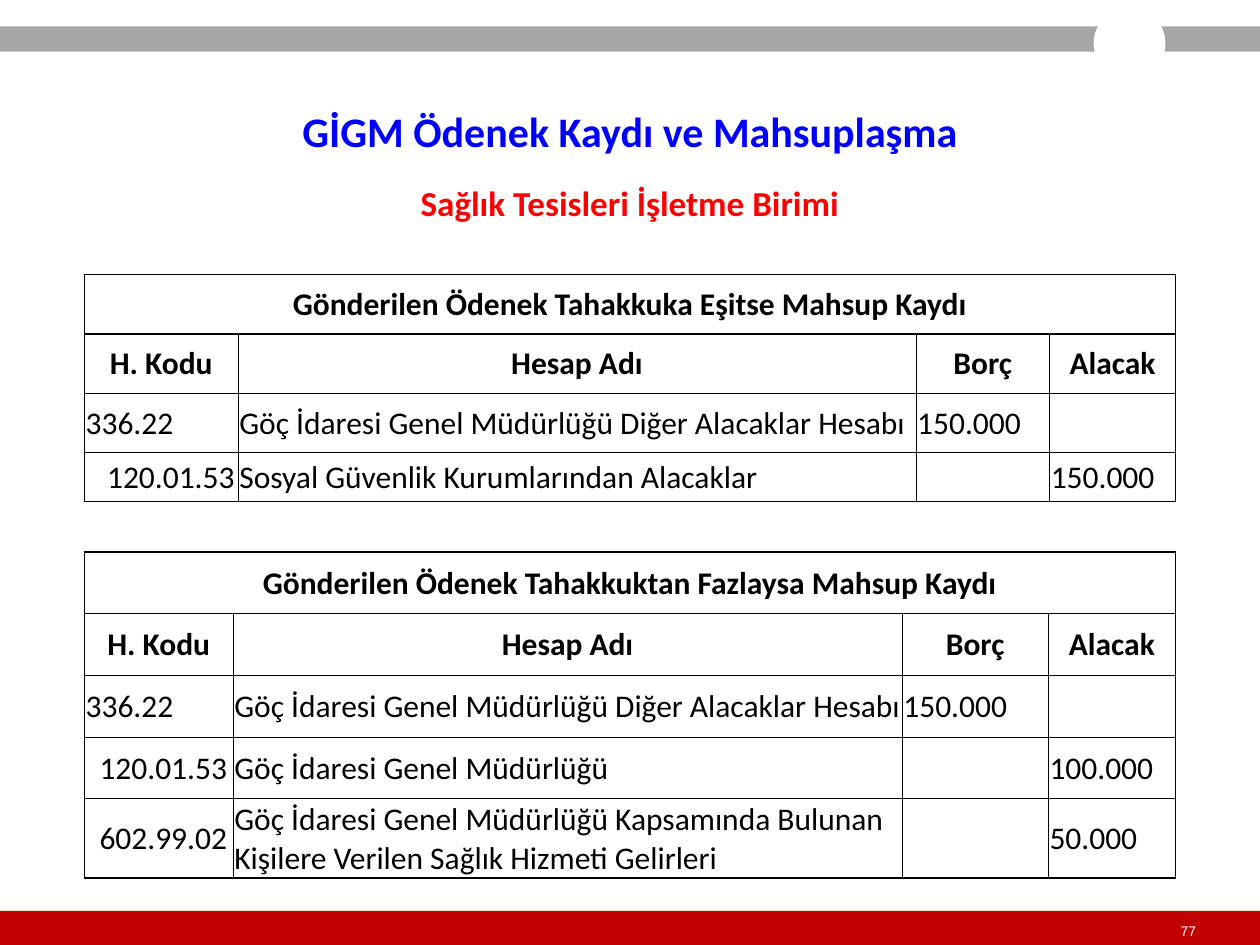
from dataclasses import dataclass

from lxml.etree import SubElement
from pptx import Presentation
from pptx.dml.color import RGBColor
from pptx.enum.shapes import MSO_SHAPE as Shape
from pptx.enum.text import MSO_ANCHOR as Anchor, MSO_AUTO_SIZE as AutoSize, PP_ALIGN as Align
from pptx.oxml.ns import qn
from pptx.util import Inches, Pt


@dataclass(frozen=True)
class Theme:
    white: str = "FFFFFF"
    black: str = "000000"
    gray: str = "A6A6A6"
    dark_red: str = "C00000"
    red: str = "FF0000"
    blue: str = "0000FF"
    font: str = "Calibri"
    number_font: str = "Arial"
    title_size: int = 24
    subtitle_size: int = 20
    table_size: int = 18
    number_size: int = 8
    thick: float = 1
    thin: float = 0.5


@dataclass(frozen=True)
class Band:
    kind: Shape
    box: tuple
    color: str


@dataclass(frozen=True)
class Ledger:
    heading: str
    top: float
    columns: tuple
    heights: tuple
    entries: tuple
    code_indent: float


THEME = Theme()
LEDGER_LEFT = 0.67
HEADERS = ("H. Kodu", "Hesap Adı", "Borç", "Alacak")
DEBIT_ENTRY = ("336.22", "Göç İdaresi Genel Müdürlüğü Diğer Alacaklar Hesabı", "150.000", "")

BANDS = (
    Band(Shape.RECTANGLE, (0, 7.23, 10, 0.3), THEME.dark_red),
    Band(Shape.RECTANGLE, (0, 0.21, 10, 0.2), THEME.gray),
    Band(Shape.OVAL, (8.68, 0.06, 0.57, 0.57), THEME.white),
)

LEDGERS = (
    Ledger(
        "Gönderilen Ödenek Tahakkuka Eşitse Mahsup Kaydı", 2.18,
        (1.22, 5.38, 1.06, 1), (0.47, 0.47, 0.47, 0.39),
        (DEBIT_ENTRY,
         ("120.01.53", "Sosyal Güvenlik Kurumlarından Alacaklar", "", "150.000")),
        0.17,
    ),
    Ledger(
        "Gönderilen Ödenek Tahakkuktan Fazlaysa Mahsup Kaydı", 4.38,
        (1.18, 5.31, 1.16, 1.01), (0.49, 0.49, 0.49, 0.49, 0.63),
        (DEBIT_ENTRY,
         ("120.01.53", "Göç İdaresi Genel Müdürlüğü", "", "100.000"),
         ("602.99.02", "Göç İdaresi Genel Müdürlüğü Kapsamında Bulunan "
          "Kişilere Verilen Sağlık Hizmeti Gelirleri", "", "50.000")),
        0.11,
    ),
)


def apply_format(target, values: dict) -> None:
    for name, value in values.items():
        setattr(target, name, value)


def write_text(frame, text: str, size: float, color: str, bold: bool = True,
               align=Align.CENTER, font: str = THEME.font) -> None:
    paragraph = frame.paragraphs[0]
    paragraph.text = text
    paragraph.alignment = align
    apply_format(paragraph.font, {"name": font, "size": Pt(size), "bold": bold})
    paragraph.font.color.rgb = RGBColor.from_string(color)


def paint(target, color: str) -> None:
    target.fill.solid()
    target.fill.fore_color.rgb = RGBColor.from_string(color)


def place(shape, box: tuple) -> None:
    names = ("left", "top", "width", "height")
    apply_format(shape, dict(zip(names, map(Inches, box))))


def draw_band(slide, band: Band) -> None:
    shape = slide.shapes.add_shape(band.kind, *map(Inches, band.box))
    shape.shadow.inherit = False
    paint(shape, band.color)
    shape.line.fill.background()


def draw_borders(cell, widths: dict) -> None:
    properties = cell._tc.get_or_add_tcPr()
    for side, width in widths.items():
        line = SubElement(properties, qn(f"a:ln{side}"), w=str(Pt(width)))
        fill = SubElement(line, qn("a:solidFill"))
        SubElement(fill, qn("a:srgbClr"), val=THEME.black)


def draw_ledger(slide, ledger: Ledger) -> None:
    rows = ((ledger.heading, "", "", ""), HEADERS, *ledger.entries)
    last_row, last_column = len(rows) - 1, len(HEADERS) - 1
    frame = slide.shapes.add_table(
        len(rows), len(HEADERS), Inches(LEDGER_LEFT), Inches(ledger.top),
        Inches(sum(ledger.columns)), Inches(sum(ledger.heights)))
    table = frame.table
    apply_format(table, {"first_row": False, "horz_banding": False})
    for column, width in zip(table.columns, ledger.columns):
        column.width = Inches(width)
    for row, height in zip(table.rows, ledger.heights):
        row.height = Inches(height)

    for r, values in enumerate(rows):
        for c, text in enumerate(values):
            cell = table.cell(r, c)
            is_header = r < 2
            # Credit account codes are set in from the debit code
            indent = ledger.code_indent if c == 0 and r > 2 else 0
            apply_format(cell, {
                "margin_left": Inches(0.01 + indent), "margin_top": Inches(0.01),
                "margin_right": Inches(0.01), "margin_bottom": 0,
                "vertical_anchor": Anchor.MIDDLE})
            write_text(cell.text_frame, text, THEME.table_size, THEME.black, is_header,
                       Align.CENTER if is_header else Align.LEFT)
            # Thick outline and heading rule, thin inner rules
            thick_sides = {"L": c == 0, "R": c == last_column,
                           "T": r < 2, "B": r in (0, last_row)}
            draw_borders(cell, {side: THEME.thick if thick else THEME.thin
                                for side, thick in thick_sides.items()})
            paint(cell, THEME.white)
    table.cell(0, 0).merge(table.cell(0, last_column))


def add_label(slide, box: tuple, text: str, **style):
    label = slide.shapes.add_textbox(*map(Inches, box))
    write_text(label.text_frame, text, **style)
    return label.text_frame


def main() -> None:
    presentation = Presentation()
    apply_format(presentation, {"slide_width": Inches(10), "slide_height": Inches(7.5)})
    slide = presentation.slides.add_slide(presentation.slide_layouts[5])

    # Page bands and number
    for band in BANDS:
        draw_band(slide, band)
    number = add_label(slide, (9.37, 7.32, 0.14, 0.13), "77", size=THEME.number_size,
                       color=THEME.white, bold=False, align=Align.LEFT,
                       font=THEME.number_font)
    apply_format(number, {
        "margin_left": 0, "margin_top": 0, "margin_right": 0, "margin_bottom": 0,
        "word_wrap": False, "vertical_anchor": Anchor.MIDDLE})

    # Title and subtitle
    title = slide.shapes.title
    place(title, (0, 0.84, 10, 0.39))
    paint(title, THEME.white)
    apply_format(title.text_frame, {"vertical_anchor": Anchor.MIDDLE,
                                    "auto_size": AutoSize.NONE})
    write_text(title.text_frame, "GİGM Ödenek Kaydı ve Mahsuplaşma",
               THEME.title_size, THEME.blue)
    subtitle = add_label(slide, (0, 1.39, 10, 0.44), "Sağlık Tesisleri İşletme Birimi",
                         size=THEME.subtitle_size, color=THEME.red)
    subtitle.word_wrap = True

    # Ledger tables
    for ledger in LEDGERS:
        draw_ledger(slide, ledger)

    presentation.save("out.pptx")


if __name__ == "__main__":
    main()
